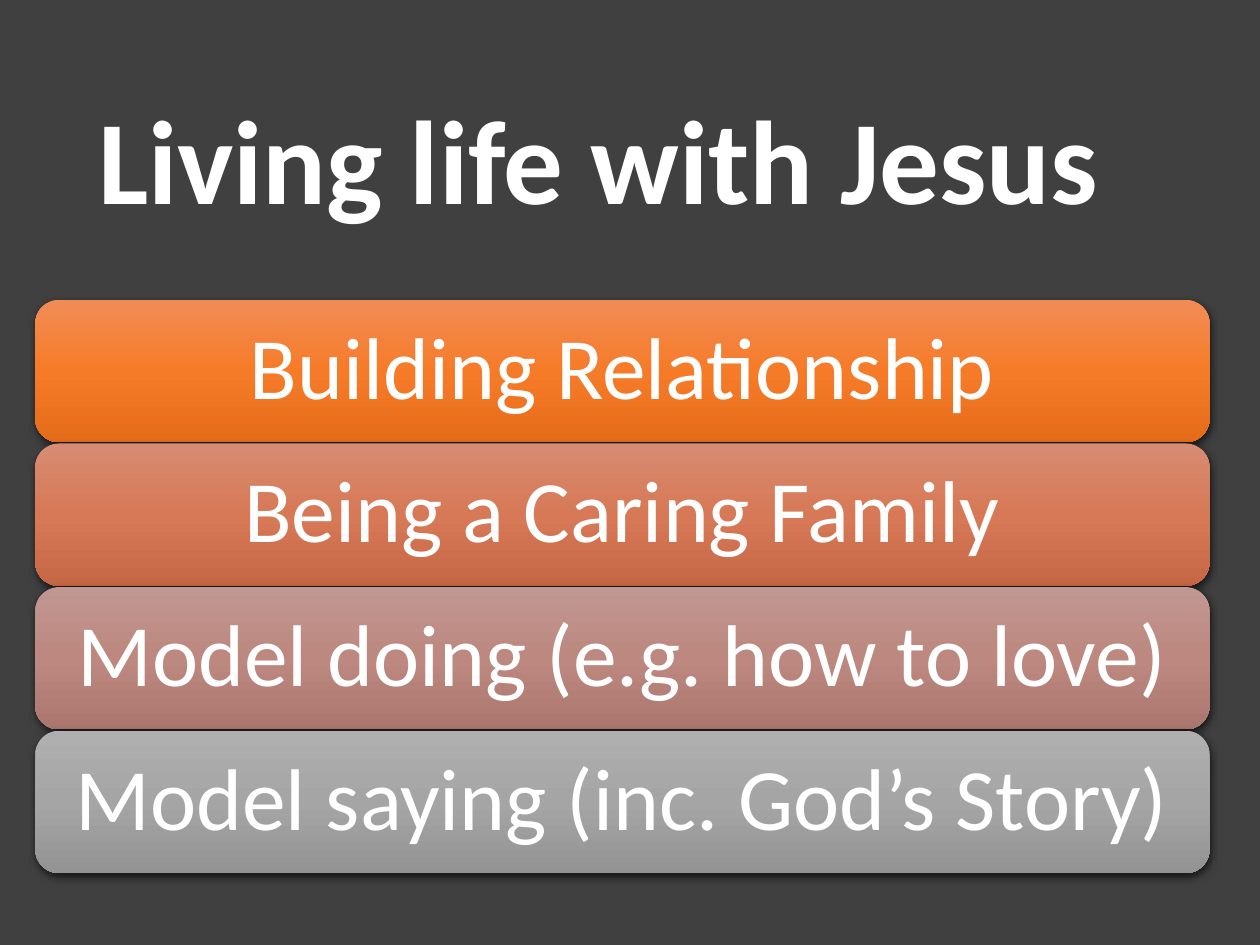
from copy import deepcopy
from dataclasses import dataclass

from lxml import etree
from pptx import Presentation
from pptx.dml.color import RGBColor
from pptx.enum.shapes import MSO_SHAPE
from pptx.enum.text import MSO_ANCHOR, PP_ALIGN
from pptx.oxml.ns import qn
from pptx.util import Inches, Pt

ROUNDED = MSO_SHAPE.ROUNDED_RECTANGLE
MIDDLE = MSO_ANCHOR.MIDDLE
LEFT, CENTER = PP_ALIGN.LEFT, PP_ALIGN.CENTER
BLANK_LAYOUT = 6


@dataclass(frozen=True)
class Theme:
    font: str = "Calibri"
    background: str = "404040"
    text: str = "FFFFFF"
    shadow: str = "000000"
    title_size: int = 68
    bar_size: int = 50
    line_spacing: float = 0.9
    bar_gradients: tuple = (
        ("F18C57", "F67B28", "E56C19"),
        ("D78B72", "D77956", "C66846"),
        ("C19791", "BC8880", "AA766E"),
        ("AFAFAF", "A5A5A5", "939393"),
    )


def write_text(box, text, *, theme, size, bold=False, align=LEFT, inset=0.1):
    frame = box.text_frame
    frame.word_wrap = True
    frame.vertical_anchor = MIDDLE
    frame.margin_left = frame.margin_right = Inches(inset)
    frame.margin_top = frame.margin_bottom = Inches(0.05)
    para = frame.paragraphs[0]
    para.alignment = align
    para.line_spacing = theme.line_spacing
    span = para.add_run()
    span.text = text
    span.font.name = theme.font
    span.font.size = Pt(size)
    span.font.bold = bold
    span.font.color.rgb = RGBColor.from_string(theme.text)


def fill_gradient(box, colors):
    """Fill from top to bottom with evenly spaced colours."""
    box.fill.gradient()
    box.fill.gradient_angle = 270
    stop_list = box._element.spPr.find(".//" + qn("a:gsLst"))
    while len(stop_list) < len(colors):
        stop_list.append(deepcopy(stop_list[-1]))
    for index, (stop, color) in enumerate(zip(box.fill.gradient_stops, colors)):
        stop.position = index / (len(colors) - 1)
        stop.color.rgb = RGBColor.from_string(color)


def drop_shadow(box, color):
    box.shadow.inherit = False
    effects = box._element.spPr.find(qn("a:effectLst"))
    outer = etree.SubElement(
        effects, qn("a:outerShdw"), blurRad=str(Pt(4.5)), dist=str(Pt(1.5)),
        dir="5400000", algn="ctr", rotWithShape="0")
    shade = etree.SubElement(outer, qn("a:srgbClr"), val=color)
    etree.SubElement(shade, qn("a:alpha"), val="63000")


class SlideBuilder:
    """Places elements by shares of the slide's width and height."""

    def __init__(self, deck, theme):
        self.deck = deck
        self.theme = theme
        self.page = deck.slides.add_slide(deck.slide_layouts[BLANK_LAYOUT])
        fill = self.page.background.fill
        fill.solid()
        fill.fore_color.rgb = RGBColor.from_string(theme.background)

    def area(self, left, top, width, height):
        across, down = self.deck.slide_width, self.deck.slide_height
        return (int(left * across), int(top * down),
                int(width * across), int(height * down))

    def title(self, text, *area):
        box = self.page.shapes.add_textbox(*self.area(*area))
        write_text(box, text, theme=self.theme, size=self.theme.title_size,
                   bold=True)

    def bar(self, text, colors, *area):
        box = self.page.shapes.add_shape(ROUNDED, *self.area(*area))
        fill_gradient(box, colors)
        box.line.fill.background()
        drop_shadow(box, self.theme.shadow)
        write_text(box, text, theme=self.theme, size=self.theme.bar_size,
                   align=CENTER, inset=0.15)

    def bar_stack(self, labels, left, top, width, height, pitch):
        for row, (label, colors) in enumerate(
                zip(labels, self.theme.bar_gradients)):
            self.bar(label, colors, left, top + row * pitch, width, height)


def main():
    deck = Presentation()
    deck.slide_width, deck.slide_height = Inches(10), Inches(7.5)
    builder = SlideBuilder(deck, Theme())
    builder.title("Living life with Jesus", 0.068, 0.4 / 7.5, 0.878, 1.83 / 7.5)
    labels = (
        "Building Relationship",
        "Being a Caring Family",
        "Model doing (e.g. how to love)",
        "Model saying (inc. God’s Story)",
    )
    builder.bar_stack(labels, left=0.028, top=2.38 / 7.5, width=0.932,
                      height=1.13 / 7.5, pitch=1.14 / 7.5)
    deck.save("out.pptx")


if __name__ == "__main__":
    main()
